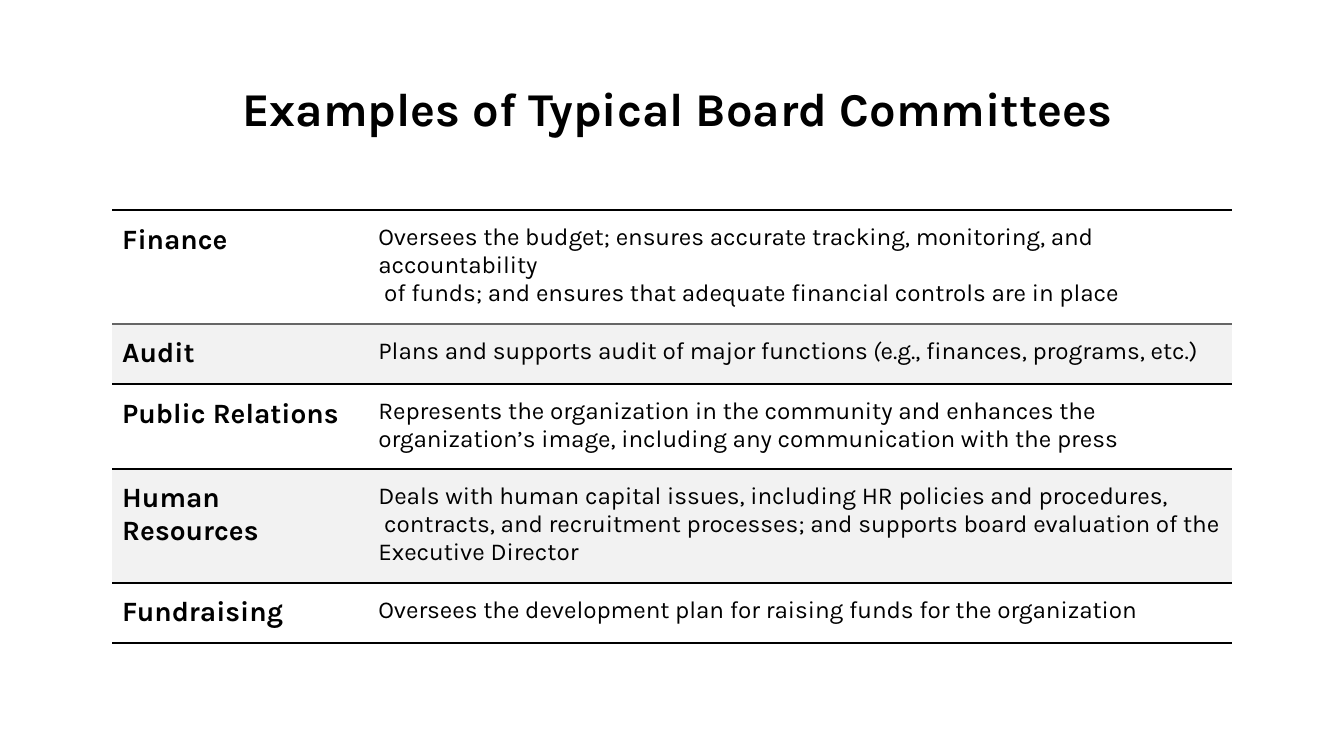
"""Build a slide with a table of typical board committees."""
from copy import deepcopy

from lxml import etree
from pptx import Presentation
from pptx import util as u
from pptx.dml.color import RGBColor
from pptx.enum import text
from pptx.oxml import ns

COLORS = {"ink": "000000", "rule": "666666", "band": "F2F2F2", "paper": "FFFFFF"}
COMMITTEES = [
    ("Finance", "Oversees the budget; ensures accurate tracking, monitoring, and accountability\v"
     " of funds; and ensures that adequate financial controls are in place", 2.1),
    ("Audit", "Plans and supports audit of major functions (e.g., finances, programs, etc.)", 1.12),
    ("Public Relations", "Represents the organization in the community and enhances the "
     "organization’s image, including any communication with the press", 1.57),
    ("Human Resources", "Deals with human capital issues, including HR policies and procedures,\v"
     " contracts, and recruitment processes; and supports board evaluation of the "
     "Executive Director", 2.1),
    ("Fundraising", "Oversees the development plan for raising funds for the organization", 1.12),
]


def style_runs(p, size, bold):
    for r in p.runs:
        r.font.name = "Karla"
        r.font.size = u.Pt(size)
        r.font.bold = bold
        r.font.color.rgb = RGBColor.from_string(COLORS["ink"])
    for br in p._p.findall(ns.qn("a:br")):
        br.append(deepcopy(p.runs[0]._r.rPr))


def set_border(cell, side, color=None):
    ln = etree.SubElement(cell._tc.get_or_add_tcPr(), ns.qn(f"a:ln{side}"), w=str(u.Pt(1)))
    if color is None:
        etree.SubElement(ln, ns.qn("a:noFill"))
    else:
        fill = etree.SubElement(ln, ns.qn("a:solidFill"))
        etree.SubElement(fill, ns.qn("a:srgbClr"), val=COLORS[color])


prs = Presentation()
prs.slide_width, prs.slide_height = u.Cm(25.4), u.Cm(14.29)
s = prs.slides.add_slide(prs.slide_layouts[6])

tf = s.shapes.add_textbox(u.Cm(0.86), u.Cm(1.24), u.Cm(23.67), u.Cm(1.6)).text_frame
tf.word_wrap = True
tf.vertical_anchor = text.MSO_ANCHOR.MIDDLE
tf.margin_left = tf.margin_right = tf.margin_top = tf.margin_bottom = u.Cm(0.25)
tf.text = " Examples of Typical Board Committees"
p = tf.paragraphs[0]
p.alignment = text.PP_ALIGN.CENTER
style_runs(p, 25.2, True)

height = sum(row[2] for row in COMMITTEES)
table = s.shapes.add_table(len(COMMITTEES), 2, u.Cm(2.12), u.Cm(3.97), u.Cm(21.16), u.Cm(height)).table
table.first_row = table.horz_banding = False
table.columns[0].width, table.columns[1].width = u.Cm(4.84), u.Cm(16.32)

for i, (name, duty, row_height) in enumerate(COMMITTEES):
    table.rows[i].height = u.Cm(row_height)
    for j, (words, size) in enumerate([(name, 15), (duty, 13)]):
        cell = table.cell(i, j)
        cell.margin_left = cell.margin_right = u.Cm(0.19)
        cell.margin_top = cell.margin_bottom = u.Cm(0.25)
        for side in "LR":
            set_border(cell, side)
        set_border(cell, "T", "rule" if i == 1 else "ink")
        set_border(cell, "B", "rule" if i == 0 else "ink")
        cell.fill.solid()
        cell.fill.fore_color.rgb = RGBColor.from_string(COLORS["band" if i % 2 else "paper"])
        p = cell.text_frame.paragraphs[0]
        start, bracket, rest = words.partition(" (")
        p.text = start
        if bracket:
            r = p.add_run()
            r.text = bracket
            r.font.italic = True
            p.add_run().text = rest
        style_runs(p, size, j == 0)

prs.save("out.pptx")
